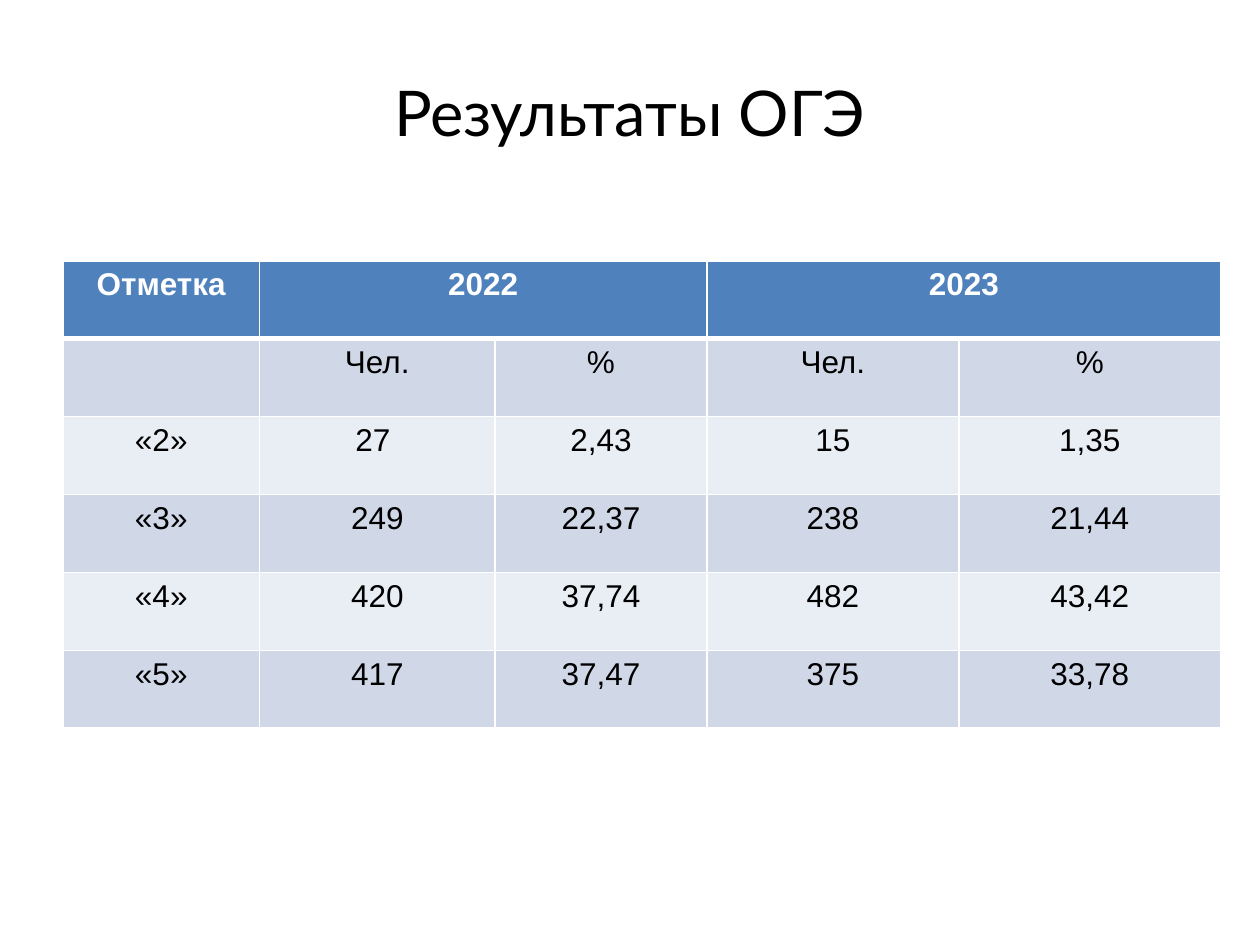
from lxml import etree
from pptx import Presentation
from pptx import util as u
from pptx.dml.color import RGBColor
from pptx.enum import text
from pptx.oxml.ns import qn

WHITE, BLACK, HEADER = "FFFFFF", "000000", "4F81BD"
BANDS = ("D0D8E8", "E9EDF4")

COLUMN_WIDTHS = (3.96, 4.75, 4.27, 5.08, 5.28)
ROW_HEIGHT = 1.57
RESULTS = (
    ("Отметка", "2022", "", "2023", ""),
    ("", "Чел.", "%", "Чел.", "%"),
    ("«2»", "27 ", "2,43", "15", "1,35"),
    ("«3»", "249", "22,37", "238", "21,44"),
    ("«4»", "420", "37,74", "482", "43,42"),
    ("«5»", "417", "37,47", "375", "33,78"),
)
YEAR_COLUMNS = (1, 3)


def colour(value):
    return RGBColor.from_string(value)


class ResultsPage:
    title_font, table_font = "Lato", "Arial"
    title_size, table_size = u.Pt(36), u.Pt(18)

    def __init__(self, deck):
        self.page = deck.slides.add_slide(deck.slide_layouts[5])

    def paragraph(self, para, words, font, size, ink, bold=False):
        para.text = words
        para.alignment = text.PP_ALIGN.CENTER
        para.font.name, para.font.size = font, size
        para.font.bold = bold
        para.font.color.rgb = colour(ink)

    def title(self, words, left, top, width, height):
        box = self.page.shapes.title
        box.left, box.top = u.Cm(left), u.Cm(top)
        box.width, box.height = u.Cm(width), u.Cm(height)
        frame = box.text_frame
        frame.auto_size = text.MSO_AUTO_SIZE.NONE
        frame.vertical_anchor = text.MSO_ANCHOR.MIDDLE
        frame.margin_left = frame.margin_right = 0
        frame.margin_top = frame.margin_bottom = 0
        para = frame.paragraphs[0]
        self.paragraph(para, words, self.title_font, self.title_size, BLACK)
        para.line_spacing = 0.9

    def border(self, cell, side, points):
        properties = cell._tc.get_or_add_tcPr()
        line = etree.SubElement(properties, qn(f"a:ln{side}"), w=str(u.Pt(points)))
        fill = etree.SubElement(line, qn("a:solidFill"))
        etree.SubElement(fill, qn("a:srgbClr"), val=WHITE)

    def cell(self, cell, words, row):
        is_header = row == 0
        for side in "LRTB":
            thick = (row, side) in ((0, "B"), (1, "T"))
            self.border(cell, side, 3 if thick else 1)
        cell.fill.solid()
        cell.fill.fore_color.rgb = colour(HEADER if is_header else BANDS[(row - 1) % 2])
        self.paragraph(cell.text_frame.paragraphs[0], words, self.table_font,
                       self.table_size, WHITE if is_header else BLACK, is_header)

    def table(self, rows, widths, row_height, left, top):
        grid = self.page.shapes.add_table(
            len(rows), len(widths), u.Cm(left), u.Cm(top),
            u.Cm(sum(widths)), u.Cm(row_height * len(rows))).table
        for column, width in zip(grid.columns, widths):
            column.width = u.Cm(width)
        for row, values in enumerate(rows):
            grid.rows[row].height = u.Cm(row_height)
            for column, words in enumerate(values):
                self.cell(grid.cell(row, column), words, row)
        for column in YEAR_COLUMNS:
            grid.cell(0, column).merge(grid.cell(0, column + 1))


def main():
    deck = Presentation()
    deck.slide_width, deck.slide_height = u.Cm(25.4), u.Cm(19.05)
    page = ResultsPage(deck)
    page.title("Результаты ОГЭ", 1.27, 0.76, 22.86, 3.18)
    page.table(RESULTS, COLUMN_WIDTHS, ROW_HEIGHT, 1.27, 5.26)
    deck.save("out.pptx")


if __name__ == "__main__":
    main()
